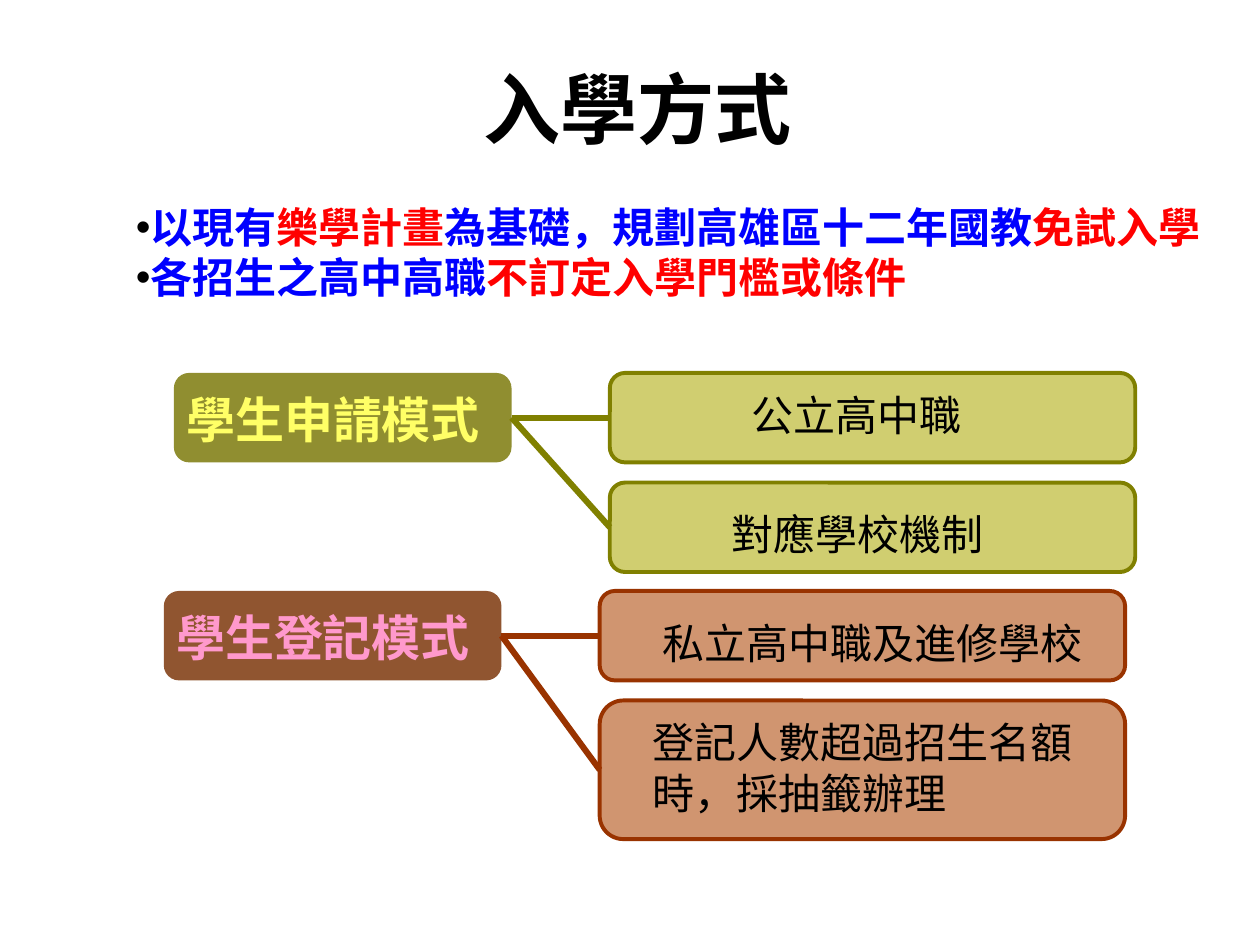
from lxml import etree
from pptx import Presentation
from pptx import util as u
from pptx.dml.color import RGBColor
from pptx.enum import shapes, text
from pptx.oxml import ns

THEME = {
    "font": "Arial", "title": 44, "mode": 28, "body": 24,
    "black": "000000", "blue": "0000FF", "red": "FF0000",
    "card_line": 2.25, "link_line": 3.5,
}
TITLE = ("入學方式", (3.74, 0.44, 2.95, 0.83))
POINTS_AT = (0.98, 1.55, 8.66, 0.9)
POINTS = [
    [("以現有", "blue"), ("樂學計畫", "red"),
     ("為基礎，規劃高雄區十二年國教", "blue"), ("免試入學", "red")],
    [("各招生之高中高職", "blue"), ("不訂定入學門檻或條件", "red")],
]
MODES = [
    {"name": "學生申請模式", "left": 1.38, "top": 2.96,
     "head": "908E30", "card": "D0CE70", "line": "808000", "ink": "FFFF66",
     "cards": [("公立高中職", 0.71, (5.87, 3.04, 1.87, 0.5)),
               ("對應學校機制", 0.71, (5.71, 3.99, 2.68, 0.5))]},
    {"name": "學生登記模式", "left": 1.3, "top": 4.69,
     "head": "905530", "card": "D09570", "line": "993300", "ink": "FF99CC",
     "cards": [("私立高中職及進修學校", 0.71, (5.16, 4.85, 3.78, 0.5)),
               ("登記人數超過招生名額時，採抽籤辦理", 1.1, (5.08, 5.64, 3.7, 0.9))]},
]
HEAD_WIDTH, HEAD_HEIGHT = 2.68, 0.71
CARD_OFFSET, CARD_WIDTH, CARD_GAP = 3.46, 4.17, 0.16


def inches(values):
    return [u.Inches(value) for value in values]


def set_all(target, values):
    for name, value in values.items():
        setattr(target, name, value)


def style(font, size, color, bold=False):
    set_all(font, {"name": THEME["font"], "size": u.Pt(size), "bold": bold})
    font.color.rgb = RGBColor.from_string(color)


def set_frame(frame, anchor=text.MSO_ANCHOR.TOP):
    set_all(frame, {
        "word_wrap": True, "auto_size": text.MSO_AUTO_SIZE.NONE,
        "vertical_anchor": anchor,
        "margin_left": u.Inches(0.1), "margin_right": u.Inches(0.1),
        "margin_top": u.Inches(0.05), "margin_bottom": u.Inches(0.05)})


def add_label(page, words, at, size, color, bold=False):
    box = page.shapes.add_textbox(*inches(at))
    set_frame(box.text_frame)
    span = box.text_frame.paragraphs[0].add_run()
    span.text = words
    style(span.font, size, color, bold)


def add_panel(page, at, fill, line=None):
    panel = page.shapes.add_shape(shapes.MSO_SHAPE.ROUNDED_RECTANGLE, *inches(at))
    panel.shadow.inherit = False
    panel.adjustments[0] = 0.17
    panel.fill.solid()
    panel.fill.fore_color.rgb = RGBColor.from_string(fill)
    if line:
        panel.line.color.rgb = RGBColor.from_string(line)
        panel.line.width = u.Pt(THEME["card_line"])
    else:
        panel.line.fill.background()
    return panel


def add_link(page, head, card, color):
    link = page.shapes.add_connector(shapes.MSO_CONNECTOR.STRAIGHT, 0, 0, 0, 0)
    link.begin_connect(head, 3)
    link.end_connect(card, 1)
    link.line.color.rgb = RGBColor.from_string(color)
    link.line.width = u.Pt(THEME["link_line"])
    etree.SubElement(link._element.spPr, ns.qn("a:effectLst"))


def add_bullet(para):
    properties = para._p.get_or_add_pPr()
    color = etree.SubElement(properties, ns.qn("a:buClr"))
    etree.SubElement(color, ns.qn("a:srgbClr"), val=THEME["black"])
    etree.SubElement(properties, ns.qn("a:buFont"), typeface=THEME["font"])
    etree.SubElement(properties, ns.qn("a:buChar"), char="•")


def add_title(page):
    words, at = TITLE
    title = page.shapes.title
    set_all(title, dict(zip(("left", "top", "width", "height"), inches(at))))
    set_frame(title.text_frame, text.MSO_ANCHOR.MIDDLE)
    para = title.text_frame.paragraphs[0]
    para.alignment = text.PP_ALIGN.LEFT
    span = para.add_run()
    span.text = words
    style(span.font, THEME["title"], THEME["black"], True)


def add_points(page):
    frame = page.shapes.add_textbox(*inches(POINTS_AT)).text_frame
    set_frame(frame)
    for index, parts in enumerate(POINTS):
        para = frame.add_paragraph() if index else frame.paragraphs[0]
        add_bullet(para)
        for words, color in parts:
            span = para.add_run()
            span.text = words
            style(span.font, THEME["body"], THEME[color], True)


def add_mode(page, mode):
    left, top = mode["left"], mode["top"]
    head = add_panel(page, (left, top, HEAD_WIDTH, HEAD_HEIGHT), mode["head"])
    add_label(page, mode["name"], (left, top + 0.08, HEAD_WIDTH, 0.57),
              THEME["mode"], mode["ink"], True)
    for words, height, label_at in mode["cards"]:
        card = add_panel(page, (left + CARD_OFFSET, top, CARD_WIDTH, height),
                         mode["card"], mode["line"])
        add_link(page, head, card, mode["line"])
        add_label(page, words, label_at, THEME["body"], THEME["black"])
        top += height + CARD_GAP


def main():
    deck = Presentation()
    set_all(deck, {"slide_width": u.Inches(10), "slide_height": u.Inches(7.5)})
    page = deck.slides.add_slide(deck.slide_layouts.get_by_name("Title Only"))
    add_title(page)
    add_points(page)
    for mode in MODES:
        add_mode(page, mode)
    deck.save("out.pptx")


if __name__ == "__main__":
    main()
